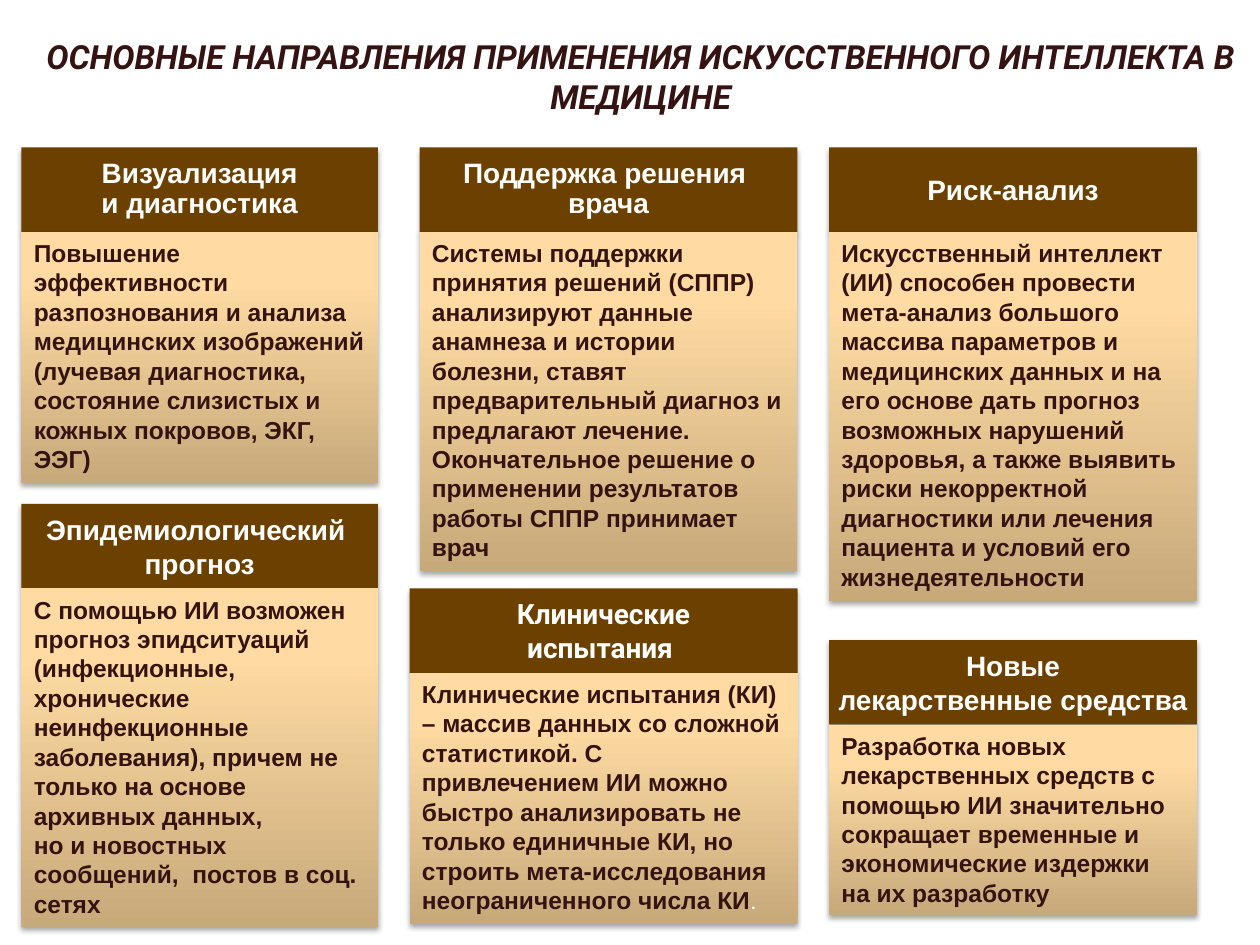
"""Build the slide on the main uses of artificial intelligence in medicine."""
import copy

import pptx
import pptx.dml.color
import pptx.enum.dml
import pptx.enum.shapes
import pptx.enum.text
import pptx.oxml
import pptx.oxml.ns
import pptx.util

Inches, Pt = pptx.util.Inches, pptx.util.Pt
RGBColor = pptx.dml.color.RGBColor
ALIGN = pptx.enum.text.PP_ALIGN
ANCHOR = pptx.enum.text.MSO_ANCHOR
AUTO = pptx.enum.text.MSO_AUTO_SIZE

DARK = RGBColor(0x34, 0x13, 0x12)
BROWN = RGBColor(0x6C, 0x41, 0x00)
WHITE = RGBColor(0xFF, 0xFF, 0xFF)
GRADIENT = [
    (0, RGBColor(0xC7, 0xA9, 0x7A)),
    (0.8, RGBColor(0xFF, 0xDB, 0xA3)),
    (1, RGBColor(0xFF, 0xDC, 0xA5)),
]

TITLE = "ОСНОВНЫЕ НАПРАВЛЕНИЯ ПРИМЕНЕНИЯ ИСКУССТВЕННОГО ИНТЕЛЛЕКТА В МЕДИЦИНЕ"
TITLE_FONT = {"name": "Roboto", "size": Pt(19), "bold": True, "italic": True}
HEAD_FONT = {"name": "Arial", "size": Pt(16), "bold": True}
BODY_FONT = {"name": "Arial", "size": Pt(14), "bold": True}
STOP_FONT = {"name": "Roboto", "size": Pt(14), "bold": False}
HEAD_H = 0.67

CARDS = [
    {"at": (0.17, 1.17), "width": 2.83, "body_h": 1.99, "spacing": 0.9,
     "head": ["Визуализация", "и диагностика"],
     "body": ["Повышение эффективности разпознования и анализа медицинских "
              "изображений (лучевая диагностика, состояние слизистых и "
              "кожных покровов, ЭКГ, ЭЭГ)"]},
    {"at": (3.33, 1.17), "width": 3, "body_h": 2.69, "spacing": 0.9,
     "head": ["Поддержка решения ", "врача"],
     "body": ["Системы поддержки принятия решений (СППР) анализируют данные "
              "анамнеза и истории болезни, ставят предварительный диагноз и "
              "предлагают лечение. Окончательное решение о применении "
              "результатов работы СППР принимает врач"]},
    {"at": (6.58, 1.17), "width": 2.92, "body_h": 2.93,
     "head": ["Риск-анализ"],
     "body": ["Искусственный интеллект (ИИ) способен провести мета-анализ "
              "большого массива параметров и медицинских данных и на его "
              "основе дать прогноз возможных нарушений здоровья, а также "
              "выявить риски некорректной",
              "диагностики или лечения пациента и условий его "
              "жизнедеятельности"]},
    {"at": (0.17, 4), "width": 2.83, "body_h": 2.69,
     "head": ["Эпидемиологический ", "прогноз"],
     "body": ["С помощью ИИ возможен прогноз эпидситуаций (инфекционные,",
              "хронические неинфекционные заболевания), причем не только на "
              "основе архивных данных,",
              "но и новостных сообщений,  постов в соц. сетях"]},
    {"at": (3.25, 4.67), "width": 3.08, "body_h": 1.99, "head_font": "Roboto",
     "head": ["Клинические", "испытания "],
     "body": ["Клинические испытания (КИ) – массив данных со сложной "
              "статистикой. С привлечением ИИ можно быстро анализировать не "
              "только единичные КИ, но строить мета-исследования "
              "неограниченного числа КИ"],
     "stop": "."},
    {"at": (6.58, 5.08), "width": 2.92, "body_h": 1.51,
     "head": ["Новые", "лекарственные средства"],
     "body": ["Разработка новых лекарственных средств с помощью ИИ "
              "значительно сокращает временные и экономические издержки",
              "на их разработку"]},
]


def apply(obj, values):
    for key, value in values.items():
        setattr(obj, key, value)


def add_run(p, text, font, color):
    r = p.add_run()
    r.text = text
    apply(r.font, font)
    r.font.color.rgb = color


def write(tf, lines, font, color, para, frame):
    apply(tf, frame)
    for i, line in enumerate(lines):
        p = tf.add_paragraph() if i else tf.paragraphs[0]
        apply(p, para)
        add_run(p, line, font, color)


def add_box(s, *box):
    kind = pptx.enum.shapes.MSO_SHAPE.RECTANGLE
    sp = s.shapes.add_shape(kind, *map(Inches, box))
    sp.line.fill.background()
    sp.shadow.inherit = False
    effects = sp._element.spPr.find(pptx.oxml.ns.qn("a:effectLst"))
    effects.append(pptx.oxml.parse_xml(
        f'<a:outerShdw {pptx.oxml.ns.nsdecls("a")} blurRad="{Pt(3.1)}" '
        f'dist="{Pt(1.8)}" dir="5400000" rotWithShape="0"><a:srgbClr '
        'val="000000"><a:alpha val="35000"/></a:srgbClr></a:outerShdw>'))
    return sp


def fill_gradient(sp):
    sp.fill.gradient()
    sp.fill.gradient_angle = 90
    stops = sp._element.spPr.find(".//" + pptx.oxml.ns.qn("a:gsLst"))
    stops.append(copy.deepcopy(stops[-1]))
    for stop, (position, color) in zip(sp.fill.gradient_stops, GRADIENT):
        stop.position = position
        stop.color.rgb = color


def add_card(s, card):
    left, top = card["at"]
    head = add_box(s, left, top, card["width"], HEAD_H)
    head.fill.solid()
    head.fill.fore_color.rgb = BROWN
    font = {**HEAD_FONT, "name": card.get("head_font", "Arial")}
    write(head.text_frame, card["head"], font, WHITE,
          {"alignment": ALIGN.CENTER, "line_spacing": card.get("spacing")},
          {"word_wrap": False, "vertical_anchor": ANCHOR.MIDDLE})

    body = add_box(s, left, top + HEAD_H, card["width"], card["body_h"])
    fill_gradient(body)
    tf = body.text_frame
    write(tf, card["body"], BODY_FONT, DARK, {"alignment": ALIGN.LEFT},
          {"word_wrap": True, "vertical_anchor": ANCHOR.TOP,
           "auto_size": AUTO.SHAPE_TO_FIT_TEXT})
    if "stop" in card:
        add_run(tf.paragraphs[-1], card["stop"], STOP_FONT, WHITE)


def main():
    prs = pptx.Presentation()
    apply(prs, {"slide_width": Inches(10), "slide_height": Inches(7.5)})
    s = prs.slides.add_slide(prs.slide_layouts[5])
    title = s.shapes.title
    apply(title, {"left": Inches(0.17), "top": Inches(0.17),
                  "width": Inches(9.83), "height": Inches(0.87)})
    write(title.text_frame, [TITLE], TITLE_FONT, DARK,
          {"alignment": ALIGN.CENTER},
          {"word_wrap": True, "vertical_anchor": ANCHOR.MIDDLE,
           "auto_size": AUTO.NONE})
    for card in CARDS:
        add_card(s, card)
    prs.save("out.pptx")


if __name__ == "__main__":
    main()
